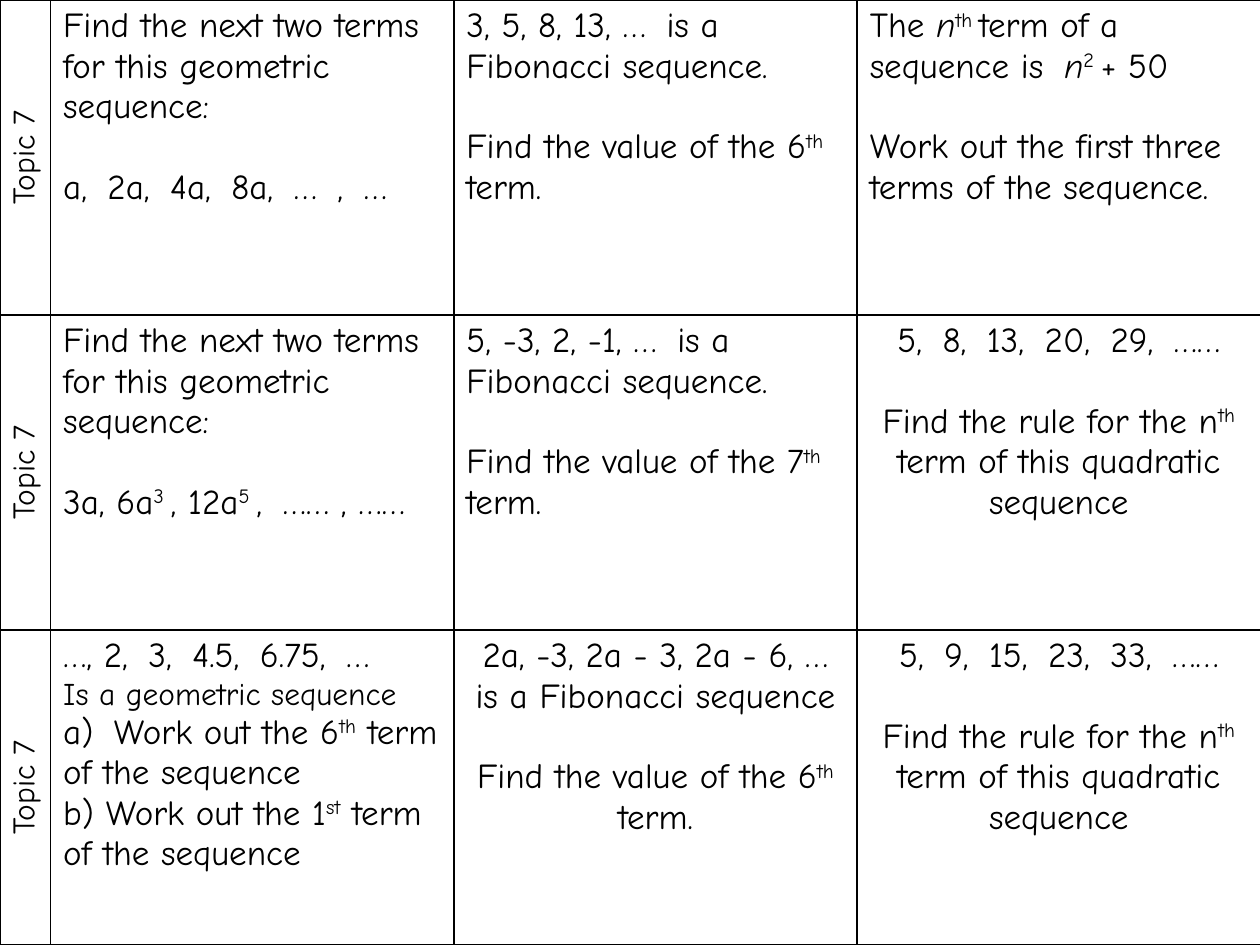
"""Build a three-by-three grid of sequence questions with topic labels."""
from dataclasses import dataclass

from lxml.etree import SubElement
from pptx import Presentation
from pptx.dml.color import RGBColor
from pptx.enum.text import PP_ALIGN
from pptx.oxml.ns import qn
from pptx.table import _Cell
from pptx.util import Cm, Pt

BLACK = RGBColor(0, 0, 0)
FONT = "Comic Neue"
BODY, SMALL = 20, 18
BLANK_LINE = Pt(23)
GAP_SPACING = 500
SUPERSCRIPT = 30000
COL_WIDTHS = [Cm(1.02)] + [Cm(8.13)] * 3
ROW_HEIGHT = Cm(6.35)


@dataclass
class Para:
    """Marked-up text: | parts runs, ^ raises, / slants, ~ is a wide gap."""
    text: str
    size: int = BODY
    spaced: bool = False


@dataclass
class Question:
    paras: list[Para]
    align: PP_ALIGN = PP_ALIGN.LEFT


def two_part(first: str, second: str, align: PP_ALIGN = PP_ALIGN.LEFT) -> Question:
    return Question([Para(first), Para(second, spaced=True)], align)


def geometric(terms: str) -> Question:
    return two_part("Find the next two terms for this geometric sequence:", terms)


def fibonacci(terms: str, n: int, align: PP_ALIGN = PP_ALIGN.LEFT) -> Question:
    return two_part(f"{terms}~is a Fibonacci sequence" + ("." if align == PP_ALIGN.LEFT else ""),
                    f"Find the value of the {n}|^th| term.", align)


def quadratic(terms: str) -> Question:
    return two_part(terms, "Find the rule for the n|^th| term of this quadratic sequence",
                    PP_ALIGN.CENTER)


TOPIC = Question([Para("Topic 7", SMALL)], PP_ALIGN.CENTER)
GRID = [
    [geometric("a,~2a,~4a,~8a,~…~,~…"),
     fibonacci("3, 5, 8, 13, …", 6),
     two_part("The |/n|^th |term of a sequence is~|/n|^2 |+ 50",
              "Work out the first three terms of the sequence.")],
    [geometric("3a, 6a|^3 |, 12a|^5 |,~…… , ……"),
     fibonacci("5, -3, 2, -1, …", 7),
     quadratic("5,~8,~13,~20,~29,~……")],
    [Question([Para("…, 2,~3,~4.5,~6.75,~…"),
               Para("Is a geometric sequence", SMALL),
               Para("a)~Work out the 6|^th| term of the sequence"),
               Para("b) Work out the 1|^st| term of the sequence")]),
     fibonacci("2a, -3, 2a - 3, 2a - 6, …", 6, PP_ALIGN.CENTER),
     quadratic("5,~9,~15,~23,~33,~……")],
]


def add_run(p, text: str, *, size: int = BODY, italic: bool = False,
            raised: bool = False, gap: bool = False) -> None:
    r = p.add_run()
    r.text = text
    r.font.name, r.font.size, r.font.italic = FONT, Pt(size), italic
    r.font.color.rgb = BLACK
    r_pr = r._r.get_or_add_rPr()
    if raised:
        r_pr.set("baseline", str(SUPERSCRIPT))
    if gap:
        r_pr.set("spc", str(GAP_SPACING))


def add_para(p, para: Para, align: PP_ALIGN) -> None:
    p.alignment = align
    if para.spaced:
        p.space_before = BLANK_LINE
    for part in filter(None, para.text.replace("~", "|~|").split("|")):
        mark = part[0]
        text = " " if mark == "~" else part[1:] if mark in "^/" else part
        add_run(p, text, size=para.size, italic=mark == "/",
                raised=mark == "^", gap=mark == "~")


def set_borders(cell: _Cell) -> None:
    tc_pr = cell._tc.get_or_add_tcPr()
    for side in "LRTB":
        ln = SubElement(tc_pr, qn(f"a:ln{side}"), w=str(Pt(1)))
        fill = SubElement(ln, qn("a:solidFill"))
        SubElement(fill, qn("a:srgbClr"), val=str(BLACK))


def fill_cell(cell: _Cell, question: Question, vertical: bool) -> None:
    set_borders(cell)
    cell.fill.background()
    if vertical:
        cell._tc.get_or_add_tcPr().set("vert", "vert270")
    tf = cell.text_frame
    for i, para in enumerate(question.paras):
        add_para(tf.add_paragraph() if i else tf.paragraphs[0], para, question.align)


def main() -> None:
    prs = Presentation()
    prs.slide_width, prs.slide_height = Cm(25.4), Cm(19.05)
    s = prs.slides.add_slide(prs.slide_layouts[6])
    table = s.shapes.add_table(len(GRID), len(COL_WIDTHS), 0, 0,
                               prs.slide_width, prs.slide_height).table
    table.first_row = table.horz_banding = False
    for col, width in zip(table.columns, COL_WIDTHS):
        col.width = width
    for i, questions in enumerate(GRID):
        table.rows[i].height = ROW_HEIGHT
        for j, question in enumerate([TOPIC, *questions]):
            fill_cell(table.cell(i, j), question, vertical=j == 0)
    prs.save("out.pptx")


if __name__ == "__main__":
    main()
